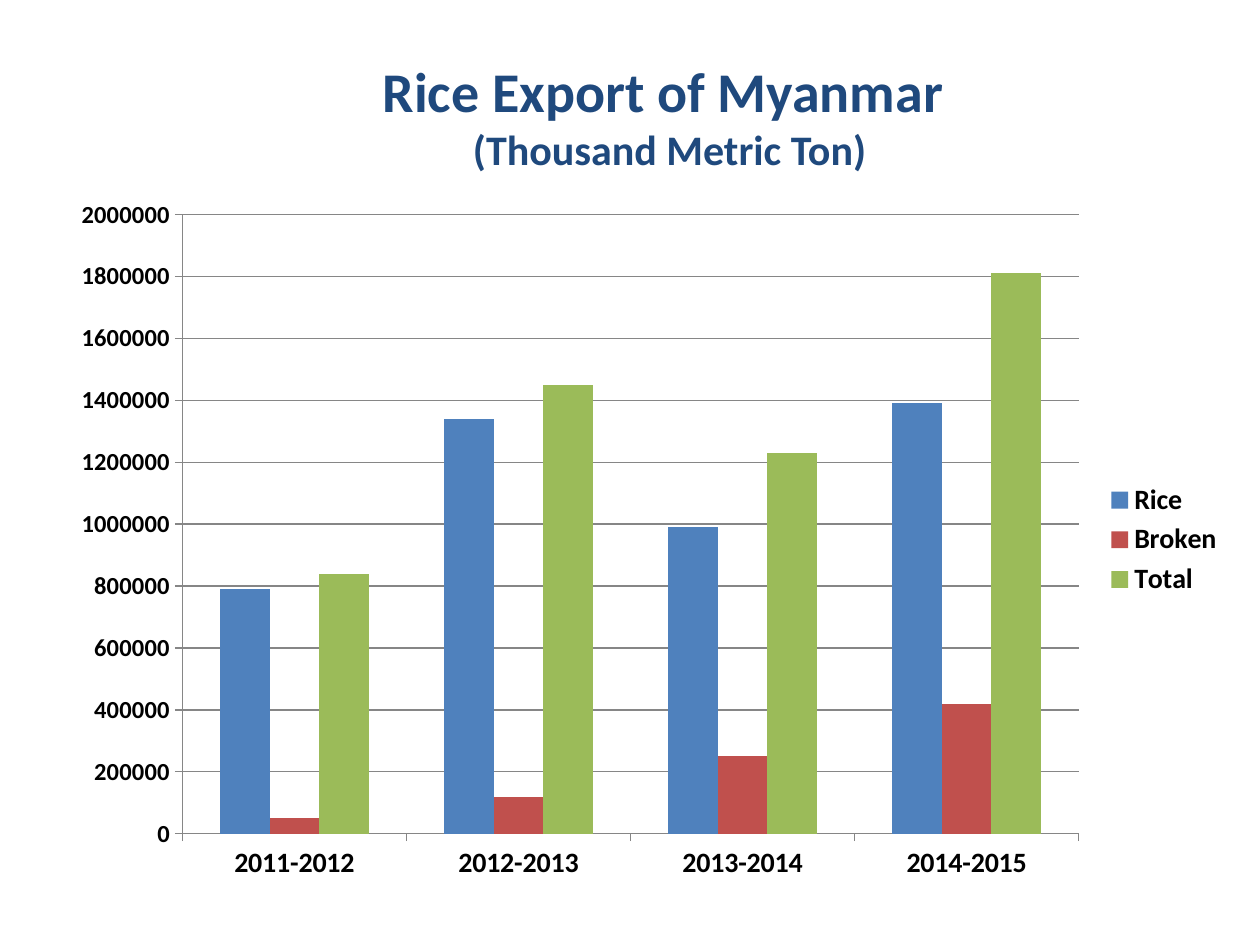
from pptx import Presentation
from pptx.chart.data import CategoryChartData
from pptx.dml.color import RGBColor
from pptx.enum.chart import XL_CHART_TYPE, XL_LEGEND_POSITION, XL_TICK_MARK
from pptx.enum.text import MSO_ANCHOR, PP_ALIGN
from pptx.util import Inches, Pt

NAVY = RGBColor(0x1F, 0x49, 0x7D)
BLACK = RGBColor(0, 0, 0)
GRAY = RGBColor(0x86, 0x86, 0x86)
BLUE = RGBColor(0x4F, 0x81, 0xBD)
RED = RGBColor(0xC0, 0x50, 0x4D)
GREEN = RGBColor(0x9B, 0xBB, 0x59)
FONT = "Calibri"

YEARS = ["2011-2012", "2012-2013", "2013-2014", "2014-2015"]
EXPORTS = [
    ("Rice", [790000, 1340000, 990000, 1390000], BLUE),
    ("Broken", [50000, 120000, 250000, 420000], RED),
    ("Total", [840000, 1450000, 1230000, 1810000], GREEN),
]


def style_font(font, size, color):
    font.name = FONT
    font.size = Pt(size)
    font.bold = True
    font.color.rgb = color


def add_title(s):
    sp = s.shapes.add_textbox(Inches(2.03), Inches(0.36), Inches(6.57), Inches(1.11))
    tf = sp.text_frame
    tf.word_wrap = True
    tf.vertical_anchor = MSO_ANCHOR.MIDDLE
    p = tf.paragraphs[0]
    p.text = "Rice Export of Myanmar \v(Thousand Metric Ton)"
    p.alignment = PP_ALIGN.CENTER
    for r, size in zip(p.runs, (32, 24)):
        style_font(r.font, size, NAVY)


def style_axis(axis, size):
    axis.major_tick_mark = XL_TICK_MARK.OUTSIDE
    axis.minor_tick_mark = XL_TICK_MARK.NONE
    axis.format.line.color.rgb = GRAY
    style_font(axis.tick_labels.font, size, BLACK)


def add_export_chart(s):
    data = CategoryChartData(number_format="General")
    data.categories = YEARS
    for name, values, _ in EXPORTS:
        data.add_series(name, values)
    chart = s.shapes.add_chart(
        XL_CHART_TYPE.COLUMN_CLUSTERED,
        Inches(0.46), Inches(1.47), Inches(9.35), Inches(5.63), data,
    ).chart
    chart.has_title = False
    chart.font.name = FONT
    chart.font.size = Pt(10)

    plot = chart.plots[0]
    plot.gap_width = 150
    plot.overlap = 0
    plot.vary_by_categories = False
    for series, (_, _, color) in zip(plot.series, EXPORTS):
        series.format.fill.solid()
        series.format.fill.fore_color.rgb = color

    style_axis(chart.category_axis, 16)
    axis = chart.value_axis
    style_axis(axis, 14)
    axis.minimum_scale = 0
    axis.maximum_scale = 2000000
    axis.major_unit = 200000
    axis.has_major_gridlines = True
    axis.major_gridlines.format.line.color.rgb = GRAY

    chart.has_legend = True
    chart.legend.position = XL_LEGEND_POSITION.RIGHT
    chart.legend.include_in_layout = False
    style_font(chart.legend.font, 16, BLACK)


def main():
    prs = Presentation()
    prs.slide_width = Inches(10)
    prs.slide_height = Inches(7.5)
    s = prs.slides.add_slide(prs.slide_layouts[6])
    add_title(s)
    add_export_chart(s)
    prs.save("out.pptx")


if __name__ == "__main__":
    main()
